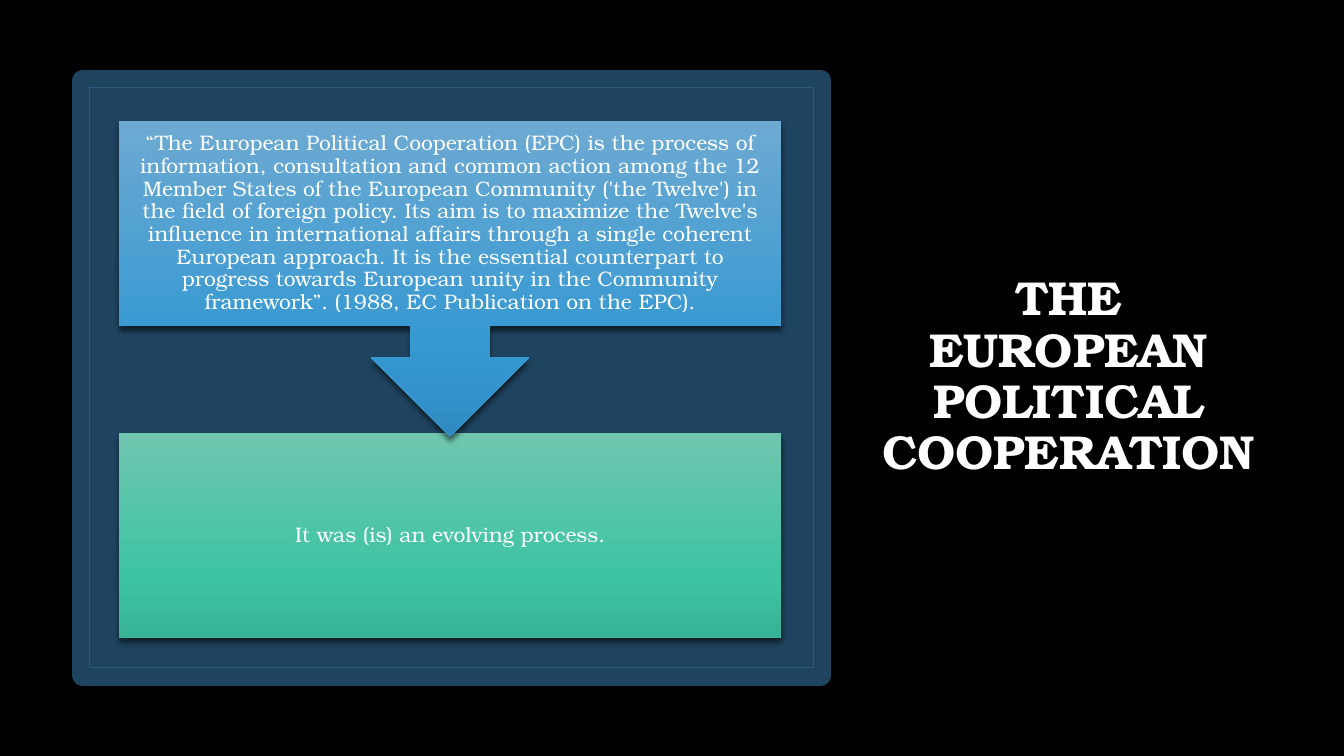
import pptx
import pptx.dml.color
import pptx.enum.shapes
import pptx.enum.text
import pptx.oxml
import pptx.oxml.ns
import pptx.util
from pptx.util import Inches

RGBColor = pptx.dml.color.RGBColor
SHAPE = pptx.enum.shapes.MSO_SHAPE
BLACK = RGBColor(0x00, 0x00, 0x00)
WHITE = RGBColor(0xFF, 0xFF, 0xFF)
NAVY = RGBColor(0x1F, 0x44, 0x5F)
FRAME_BLUE = RGBColor(0x2A, 0x5B, 0x7F)
BLUES = (RGBColor(0x6D, 0xAA, 0xD2), RGBColor(0x37, 0x99, 0xD2), RGBColor(0x2F, 0x8C, 0xC2))
GREENS = (RGBColor(0x70, 0xC6, 0xAF), RGBColor(0x3E, 0xC4, 0xA3), RGBColor(0x37, 0xB3, 0x95))
GRADIENT_STOPS = (0, 69, 100)
FONT = "TeX Gyre Bonum"

TITLE = "THE EUROPEAN POLITICAL COOPERATION"
DEFINITION = (
    "“The European Political Cooperation (EPC) is the process of information, "
    "consultation and common action among the 12 Member States of the European "
    "Community ('the Twelve') in the field of foreign policy. Its aim is to maximize "
    "the Twelve's influence in international affairs through a single coherent "
    "European approach. It is the essential counterpart to progress towards European "
    "unity in the Community framework”. (1988, EC Publication on the EPC)."
)
CONCLUSION = "It was (is) an evolving process."


def drawing_element(xml):
    return pptx.oxml.parse_xml(xml.replace(" ", f" {pptx.oxml.ns.nsdecls('a')} ", 1))


def write_text(shape, text, size, bold=False, inset=0.1):
    frame = shape.text_frame
    frame.word_wrap = True
    frame.auto_size = pptx.enum.text.MSO_AUTO_SIZE.NONE
    frame.vertical_anchor = pptx.enum.text.MSO_ANCHOR.MIDDLE
    frame.margin_left = frame.margin_right = Inches(inset)
    frame.margin_top = frame.margin_bottom = Inches(inset)
    para = frame.paragraphs[0]
    para.alignment = pptx.enum.text.PP_ALIGN.CENTER
    para.line_spacing = 0.9
    span = para.add_run()
    span.text = text
    span.font.name = FONT
    span.font.size = pptx.util.Pt(size)
    span.font.bold = bold
    span.font.color.rgb = WHITE


def add_box(page, kind, left, top, width, height, line=None, line_width=1):
    box = page.shapes.add_shape(kind, Inches(left), Inches(top), Inches(width), Inches(height))
    box.fill.background()
    if line is None:
        box.line.fill.background()
    else:
        box.line.color.rgb = line
        box.line.width = pptx.util.Pt(line_width)
    box.shadow.inherit = False
    return box


def add_shadow(box, opacity, blur, distance):
    effects = box._element.spPr.find(pptx.oxml.ns.qn("a:effectLst"))
    effects.append(drawing_element(
        f'<a:outerShdw blurRad="{pptx.util.Pt(blur)}" dist="{pptx.util.Pt(distance)}" '
        f'dir="5400000" rotWithShape="0"><a:srgbClr val="{BLACK}">'
        f'<a:alpha val="{opacity * 1000}"/></a:srgbClr></a:outerShdw>'))


def fill_gradient(box, colors):
    box.fill.gradient()
    gradient = box._element.spPr.find(pptx.oxml.ns.qn("a:gradFill"))
    for child in list(gradient):
        gradient.remove(child)
    stops = "".join(
        f'<a:gs pos="{stop * 1000}"><a:srgbClr val="{color}"/></a:gs>'
        for stop, color in zip(GRADIENT_STOPS, colors))
    gradient.append(drawing_element(f'<a:gsLst >{stops}</a:gsLst>'))
    gradient.append(drawing_element('<a:lin ang="5400000" scaled="0"/>'))


def add_step(page, kind, top, height, colors, text):
    step = add_box(page, kind, 1.18, top, 6.57, height)
    fill_gradient(step, colors)
    add_shadow(step, opacity=54, blur=4, distance=3)
    write_text(step, text, size=15, inset=0.12)


def add_panel(page):
    panel = add_box(page, SHAPE.RECTANGLE, 0.82, 0.8, 7.32, 5.9, line=NAVY, line_width=15)
    panel.fill.solid()
    panel.fill.fore_color.rgb = NAVY
    add_shadow(panel, opacity=40, blur=4.3, distance=1.4)
    add_box(page, SHAPE.RECTANGLE, 0.89, 0.87, 7.18, 5.75, line=FRAME_BLUE)


def add_title(page):
    title = page.shapes.title
    title.left, title.top = Inches(8.61), Inches(0.69)
    title.width, title.height = Inches(3.98), Inches(6.11)
    write_text(title, TITLE, size=34, bold=True)


def main():
    deck = pptx.Presentation()
    deck.slide_width, deck.slide_height = Inches(13.33), Inches(7.5)
    page = deck.slides.add_slide(deck.slide_layouts.get_by_name("Title Only"))
    page.background.fill.solid()
    page.background.fill.fore_color.rgb = BLACK
    add_title(page)
    add_panel(page)
    add_step(page, SHAPE.RECTANGLE, 4.3, 2.03, GREENS, CONCLUSION)
    add_step(page, SHAPE.DOWN_ARROW_CALLOUT, 1.2, 3.13, BLUES, DEFINITION)
    deck.save("out.pptx")


if __name__ == "__main__":
    main()
